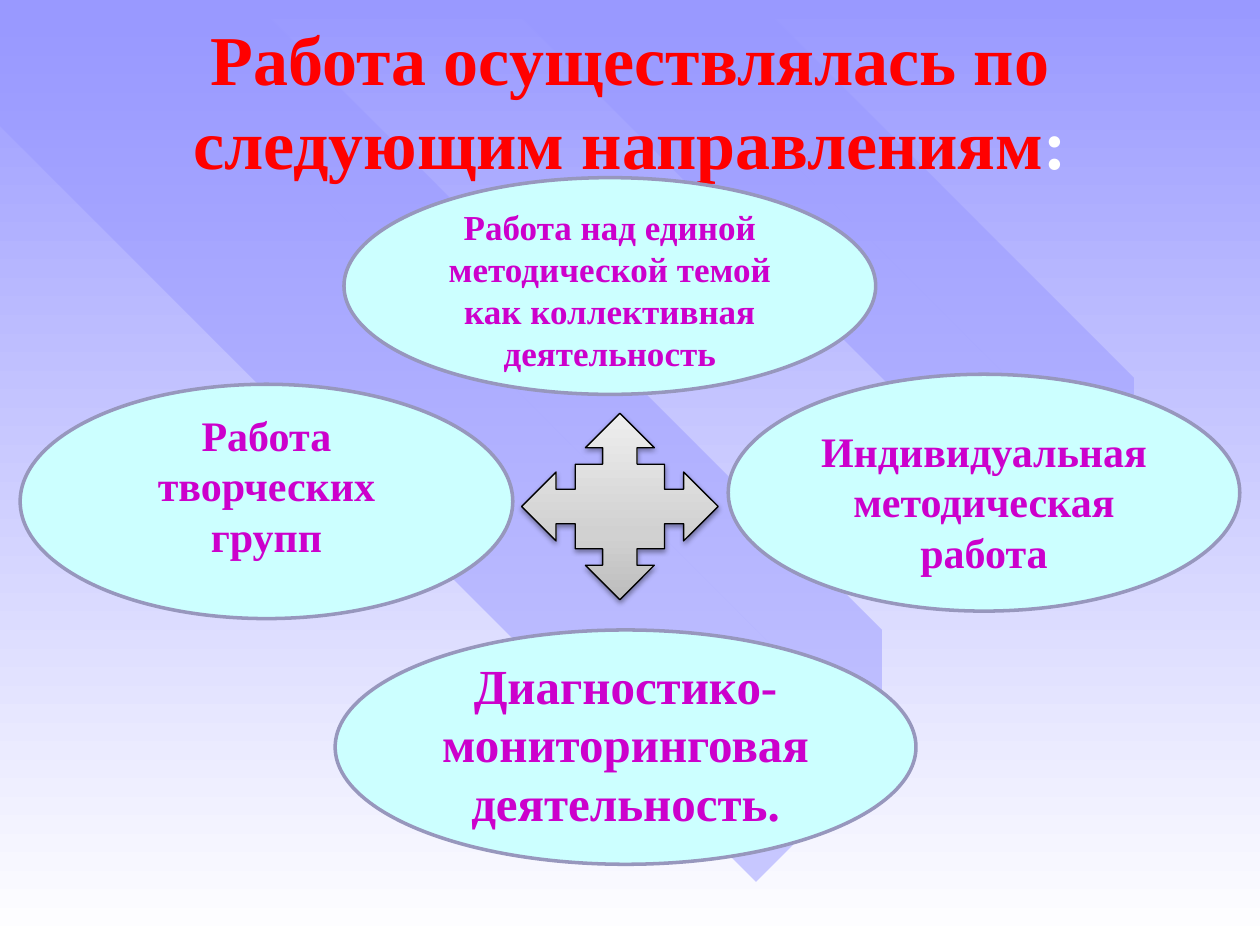
import copy
import pptx
import pptx.util
import pptx.dml.color
import pptx.enum.shapes
import pptx.enum.text
import pptx.oxml
import pptx.oxml.ns
from pptx.util import Inches

SHAPE = pptx.enum.shapes.MSO_SHAPE
FONT = "Times New Roman"
A = 'xmlns:a="http://schemas.openxmlformats.org/drawingml/2006/main"'


def paint(color, value):
    color.rgb = pptx.dml.color.RGBColor.from_string(value)


def style(r, size, value):
    r.font.name, r.font.size, r.font.bold = FONT, pptx.util.Pt(size), True
    paint(r.font.color, value)


prs = pptx.Presentation()
prs.slide_width, prs.slide_height = Inches(10), Inches(7.5)
s = prs.slides.add_slide(prs.slide_layouts[5])

# Background gradient, top to bottom
fill = s.background.fill
fill.gradient()
fill.gradient_angle = 270
for stop, value in zip(fill.gradient_stops, ("9999FF", "FFFFFF")):
    paint(stop.color, value)

# Translucent diagonal bands
bands = [
    [(6.7, 5.93), (0.79, 0), (0, 0), (0, 0.84), (5.89, 6.75)],
    [(2.14, 0), (7.38, 5.27), (7.06, 5.59), (1.49, 0)],
    [(4.89, 0), (8.76, 3.89), (8.21, 4.44), (3.8, 0)],
    [(5.3, 0), (8.97, 3.68), (9.27, 3.38), (5.91, 0)],
]
for points in bands:
    fb = s.shapes.build_freeform(*points[0], scale=Inches(1))
    fb.add_line_segments(points[1:], close=True)
    sp = fb.convert_to_shape()
    sp.shadow.inherit = False
    sp.line.fill.background()
    sp.fill.solid()
    paint(sp.fill.fore_color, "9999FF")
    clr = sp._element.spPr.find(".//" + pptx.oxml.ns.qn("a:srgbClr"))
    clr.append(pptx.oxml.parse_xml(f'<a:alpha {A} val="50000"/>'))

# Title, in front of the bands
title = s.shapes.title
s.shapes._spTree.append(title._element)
title.left, title.top, title.width, title.height = map(Inches, (0.75, 0.25, 8.5, 1.08))
tf = title.text_frame
tf.auto_size = pptx.enum.text.MSO_AUTO_SIZE.NONE
tf.vertical_anchor = pptx.enum.text.MSO_ANCHOR.MIDDLE
p = tf.paragraphs[0]
p.text = "Работа осуществлялась по следующим направлениям"
p.alignment = pptx.enum.text.PP_ALIGN.CENTER
style(p.runs[0], 40, "FF0000")
r = p.add_run()
r.text = ":"
style(r, 40, "FFFFFF")

# Four-way arrow in the centre
sp = s.shapes.add_shape(SHAPE.QUAD_ARROW_CALLOUT, *map(Inches, (4.14, 3.28, 1.56, 1.48)))
for i, share in enumerate((0.185, 0.185, 0.185, 0.454)):
    sp.adjustments[i] = share
sp.fill.gradient()
sp.fill.gradient_angle = 90
first = sp._element.spPr.find(".//" + pptx.oxml.ns.qn("a:gs"))
first.addnext(copy.deepcopy(first))
stops = zip(sp.fill.gradient_stops, (0, 0.35, 1), ("BDBDBD", "D1D1D1", "EEEEEE"))
for stop, position, value in stops:
    stop.position = position
    paint(stop.color, value)
paint(sp.line.color, "000000")
sp.line.width = pptx.util.Pt(0.75)
sp.shadow.inherit = False
effects = sp._element.spPr.find(pptx.oxml.ns.qn("a:effectLst"))
effects.append(pptx.oxml.parse_xml(
    f'<a:outerShdw {A} blurRad="40000" dist="20000" dir="5400000" rotWithShape="0">'
    '<a:srgbClr val="000000"><a:alpha val="38000"/></a:srgbClr></a:outerShdw>'))

# Directions: box, text size, top and bottom inset, wording
directions = [
    ((2.73, 1.41, 4.22, 1.72), 20, 0.1, 0.05,
     "Работа над единой методической темой как коллективная деятельность"),
    ((5.78, 2.97, 4.06, 1.88), 24, 0.18, 0.05, "Индивидуальная методическая работа"),
    ((0.16, 3.05, 3.91, 1.86), 24, 0.05, 0.31, "Работа творческих групп"),
    ((2.66, 5, 4.61, 1.86), 28, 0.05, 0.11, "Диагностико-мониторинговая деятельность."),
]
for box, size, top, bottom, text in directions:
    sp = s.shapes.add_shape(SHAPE.OVAL, *map(Inches, box))
    sp.shadow.inherit = False
    sp.fill.solid()
    paint(sp.fill.fore_color, "CCFFFF")
    paint(sp.line.color, "9797BD")
    sp.line.width = pptx.util.Pt(2)
    tf = sp.text_frame
    tf.word_wrap = True
    tf.vertical_anchor = pptx.enum.text.MSO_ANCHOR.MIDDLE
    tf.margin_top, tf.margin_bottom = Inches(top), Inches(bottom)
    p = tf.paragraphs[0]
    p.text = text
    p.alignment = pptx.enum.text.PP_ALIGN.CENTER
    style(p.runs[0], size, "CC00CC")

prs.save("out.pptx")
